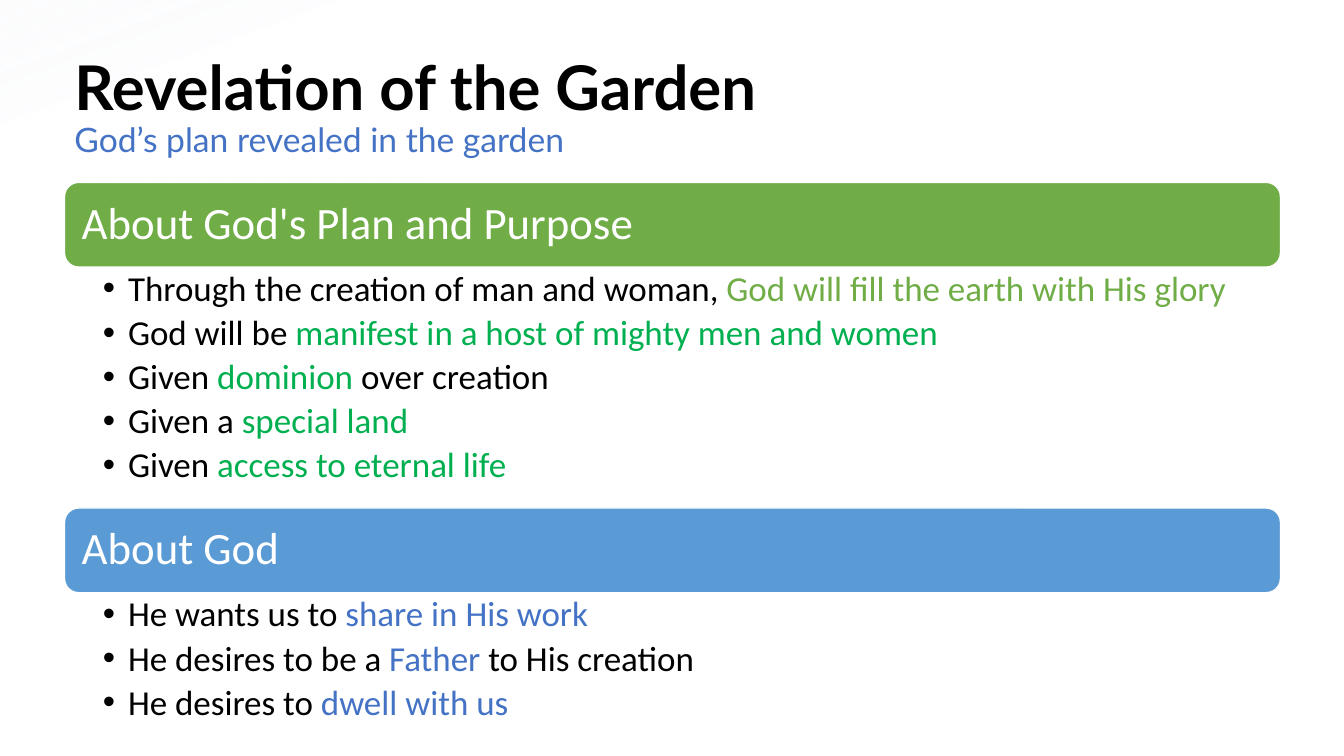
from lxml import etree
from pptx import Presentation
from pptx.dml.color import RGBColor
from pptx.enum.shapes import MSO_SHAPE
from pptx.enum.text import MSO_ANCHOR, PP_ALIGN
from pptx.oxml import parse_xml
from pptx.oxml.ns import nsdecls, qn
from pptx.util import Inches, Pt

RECT, ROUNDED = MSO_SHAPE.RECTANGLE, MSO_SHAPE.ROUNDED_RECTANGLE
TOP, MIDDLE = MSO_ANCHOR.TOP, MSO_ANCHOR.MIDDLE
LEFT = PP_ALIGN.LEFT

COLORS = {
    "black": "000000",
    "white": "FFFFFF",
    "leaf": "70AD47",
    "green": "00B050",
    "sky": "5B9BD5",
    "blue": "4472C4",
}
GLOW_STOPS = [(0, "F6F8FC", 25), (34, "FFFFFF", 70), (53, "FFFFFF", 85), (67, "FFFFFF", 100)]
X, WIDTH, BAR_HEIGHT = 0.64, 12.06, 0.84

SECTIONS = [
    ("About God's Plan and Purpose", "leaf", 1.81, 2.39, [
        [("Through the creation of man and woman, ", "black"),
         ("God will fill the earth with His glory", "leaf")],
        [("God will be ", "black"), ("manifest in a host of mighty men and women", "green")],
        [("Given ", "black"), ("dominion", "green"), (" over creation", "black")],
        [("Given a ", "black"), ("special land", "green")],
        [("Given ", "black"), ("access to eternal life", "green")],
    ]),
    ("About God", "sky", 5.04, 1.41, [
        [("He wants us to ", "black"), ("share in His work", "blue")],
        [("He desires to be a ", "black"), ("Father", "blue"), (" to His creation", "black")],
        [("He desires to ", "black"), ("dwell with us", "blue")],
    ]),
]


def rgb(name):
    """Return the named colour."""
    return RGBColor.from_string(COLORS[name])


def set_frame(tf, anchor, left, top, right, bottom):
    """Set wrapping, anchor and insets of a text frame."""
    insets = {"margin_left": left, "margin_top": top, "margin_right": right, "margin_bottom": bottom}
    for name, value in insets.items():
        setattr(tf, name, Inches(value))
    tf.word_wrap = True
    tf.vertical_anchor = anchor


def set_paragraph(p, space_after=0):
    """Apply the common paragraph spacing and alignment."""
    formats = {"alignment": LEFT, "line_spacing": 0.9, "space_before": Pt(0), "space_after": Pt(space_after)}
    for name, value in formats.items():
        setattr(p, name, value)


def add_run(p, text, size, color, font="Calibri", bold=False):
    """Append a formatted run to a paragraph."""
    r = p.add_run()
    r.text = text
    for name, value in {"name": font, "size": Pt(size), "bold": bold}.items():
        setattr(r.font, name, value)
    r.font.color.rgb = rgb(color)


def add_bullet(p):
    """Give a paragraph a hanging round bullet."""
    pPr = p._p.get_or_add_pPr()
    pPr.set("marL", str(Inches(0.25)))
    pPr.set("indent", str(-Inches(0.25)))
    etree.SubElement(pPr, qn("a:buFont")).set("typeface", "Arial")
    etree.SubElement(pPr, qn("a:buChar")).set("char", "•")


def add_glow(s):
    """Draw the faint gradient in the top left corner."""
    sp = s.shapes.add_shape(RECT, 0, 0, Inches(4.2), Inches(2.37))
    sp.shadow.inherit = False
    sp.line.fill.background()
    stops = "".join(
        f'<a:gs pos="{pos * 1000}"><a:srgbClr val="{color}"><a:alpha val="{alpha * 1000}"/></a:srgbClr></a:gs>'
        for pos, color, alpha in GLOW_STOPS)
    sp._element.spPr.find(qn("a:prstGeom")).addnext(parse_xml(
        f'<a:gradFill {nsdecls("a")}><a:gsLst>{stops}</a:gsLst><a:lin ang="{70 * 60000}" scaled="0"/></a:gradFill>'))


def add_title(s, title, subtitle):
    """Add the title with its subtitle on the next line."""
    tf = s.shapes.add_textbox(Inches(X), Inches(0.35), Inches(WIDTH), Inches(1.45)).text_frame
    set_frame(tf, MIDDLE, 0.1, 0.05, 0.1, 0.05)
    p = tf.paragraphs[0]
    set_paragraph(p)
    add_run(p, title, 44, "black", "Lato", True)
    p.add_line_break()
    add_run(p, subtitle, 24, "blue", "Lato")


def add_bar(s, text, color, top):
    """Add a rounded section heading."""
    sp = s.shapes.add_shape(ROUNDED, Inches(X), Inches(top), Inches(WIDTH), Inches(BAR_HEIGHT))
    sp.shadow.inherit = False
    sp.fill.solid()
    sp.fill.fore_color.rgb = rgb(color)
    sp.line.color.rgb = rgb("white")
    sp.line.width = Pt(1)
    set_frame(sp.text_frame, MIDDLE, 0.13, 0.13, 0.13, 0.13)
    p = sp.text_frame.paragraphs[0]
    set_paragraph(p)
    add_run(p, text, 32, "white")


def add_bullets(s, items, top, height):
    """Add the bulleted list below a heading."""
    tf = s.shapes.add_textbox(Inches(X), Inches(top), Inches(WIDTH), Inches(height)).text_frame
    set_frame(tf, TOP, 0.38, 0.04, 0.25, 0.04)
    for i, item in enumerate(items):
        p = tf.add_paragraph() if i else tf.paragraphs[0]
        set_paragraph(p, 4.5)
        add_bullet(p)
        for text, color in item:
            add_run(p, text, 25, color)


def main():
    """Build and save the slide."""
    prs = Presentation()
    prs.slide_width, prs.slide_height = Inches(13.33), Inches(7.5)
    s = prs.slides.add_slide(prs.slide_layouts[6])
    add_glow(s)
    for heading, color, top, height, items in SECTIONS:
        add_bar(s, heading, color, top)
        add_bullets(s, items, top + BAR_HEIGHT, height)
    add_title(s, "Revelation of the Garden", "God’s plan revealed in the garden")
    prs.save("out.pptx")


if __name__ == "__main__":
    main()
